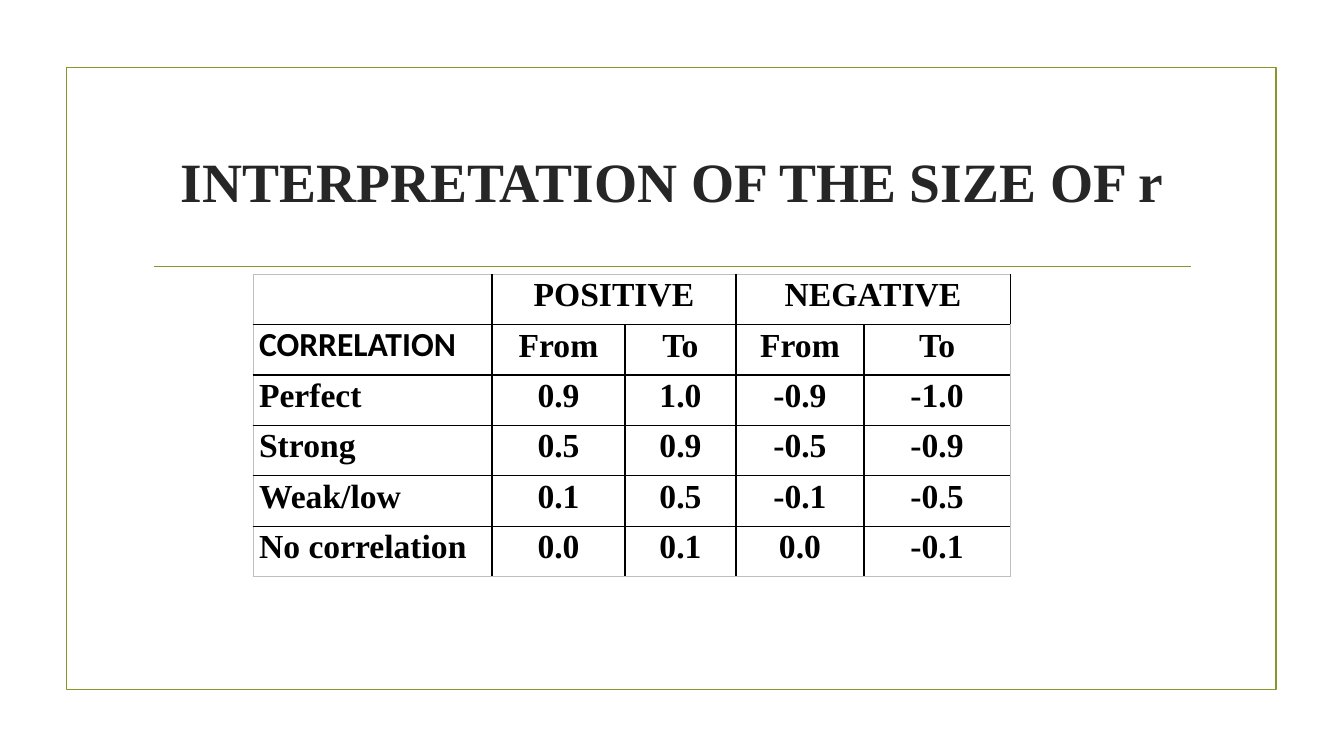
from lxml.etree import SubElement
from pptx import Presentation
from pptx.dml.color import RGBColor
from pptx.enum.shapes import MSO_CONNECTOR as Connector, MSO_SHAPE as Preset
from pptx.enum.text import MSO_ANCHOR as Anchor, PP_ALIGN as Align
from pptx.oxml.ns import qn
from pptx.util import Inches, Pt

GREEN = RGBColor(0x83, 0x99, 0x2A)
CHARCOAL = RGBColor(0x26, 0x26, 0x26)
BLACK = RGBColor(0, 0, 0)
GREY = RGBColor(0xBF, 0xBF, 0xBF)
SERIF = "Times New Roman"
SANS = "Calibri"

COLUMN_WIDTHS = (2.37, 1.32, 1.1, 1.27, 1.45)
ROW_HEIGHT = 0.5
ROWS = (
    ("", "POSITIVE", "", "NEGATIVE", ""),
    ("CORRELATION", "From", "To", "From", "To"),
    ("Perfect", "0.9", "1.0", "-0.9", "-1.0"),
    ("Strong", "0.5", "0.9", "-0.5", "-0.9"),
    ("Weak/low", "0.1", "0.5", "-0.1", "-0.5"),
    ("No correlation", "0.0", "0.1", "0.0", "-0.1"),
)


def apply(target, values):
    for name, value in values.items():
        setattr(target, name, value)


def write(para, text, align, color, size, font=SERIF):
    para.alignment = align
    span = para.add_run()
    span.text = text
    apply(span.font, {"name": font, "size": Pt(size), "bold": True})
    span.font.color.rgb = color


def green_line(shape):
    shape.line.color.rgb = GREEN
    shape.line.width = Pt(1.25)


def add_frame(page, left, top, width, height):
    frame = page.shapes.add_shape(
        Preset.RECTANGLE, *map(Inches, (left, top, width, height)))
    frame.shadow.inherit = False
    frame.fill.background()
    green_line(frame)
    rule_y = top + 0.32 * height
    rule = page.shapes.add_connector(
        Connector.STRAIGHT,
        *map(Inches, (left + 0.87, rule_y, left + width - 0.85, rule_y)))
    green_line(rule)
    SubElement(rule._element.spPr, qn("a:effectLst"))


def add_title(page, left, top, width, height):
    box = page.shapes.add_textbox(*map(Inches, (left, top, width, height)))
    apply(box.text_frame, {"word_wrap": True, "vertical_anchor": Anchor.MIDDLE})
    write(box.text_frame.paragraphs[0], "INTERPRETATION OF THE SIZE OF r",
          Align.CENTER, CHARCOAL, 39.6)


def set_borders(cell, outer_sides):
    cell.fill.background()
    properties = cell._tc.get_or_add_tcPr()
    for index, (side, is_outer) in enumerate(outer_sides.items()):
        width = Pt(0.5) if is_outer else Pt(1)
        border = SubElement(properties, qn(f"a:ln{side}"), w=str(width))
        solid = SubElement(border, qn("a:solidFill"))
        SubElement(solid, qn("a:srgbClr"), val=str(GREY if is_outer else BLACK))
        properties.insert(index, border)


def add_correlation_table(page, left, top):
    row_count, column_count = len(ROWS), len(COLUMN_WIDTHS)
    size = sum(COLUMN_WIDTHS), ROW_HEIGHT * row_count
    table = page.shapes.add_table(
        row_count, column_count, *map(Inches, (left, top, *size))).table
    apply(table, {"first_row": False, "horz_banding": False})
    for column, width in zip(table.columns, COLUMN_WIDTHS):
        column.width = Inches(width)
    for start in (1, 3):
        table.cell(0, start).merge(table.cell(0, start + 1))
    for r, row in enumerate(ROWS):
        table.rows[r].height = Inches(ROW_HEIGHT)
        for c, text in enumerate(row):
            cell = table.cell(r, c)
            apply(cell, {"margin_left": Inches(0.06), "margin_right": Inches(0.06),
                         "margin_top": 0, "margin_bottom": 0})
            set_borders(cell, {"L": c == 0, "R": c == column_count - 1,
                               "T": r == 0, "B": r == row_count - 1})
            if text:
                para = cell.text_frame.paragraphs[0]
                is_heading = text == "CORRELATION"
                para.line_spacing = 1.0 if is_heading else 1.07
                write(para, text, Align.CENTER if c else Align.LEFT, BLACK, 24,
                      SANS if is_heading else SERIF)


def main():
    deck = Presentation()
    apply(deck, {"slide_width": Inches(13.33), "slide_height": Inches(7.5)})
    page = deck.slides.add_slide(deck.slide_layouts[6])
    add_frame(page, 0.66, 0.67, 12, 6.17)
    add_title(page, 1.42, 1.07, 10.5, 1.43)
    add_correlation_table(page, 2.51, 2.72)
    deck.save("out.pptx")


if __name__ == "__main__":
    main()
